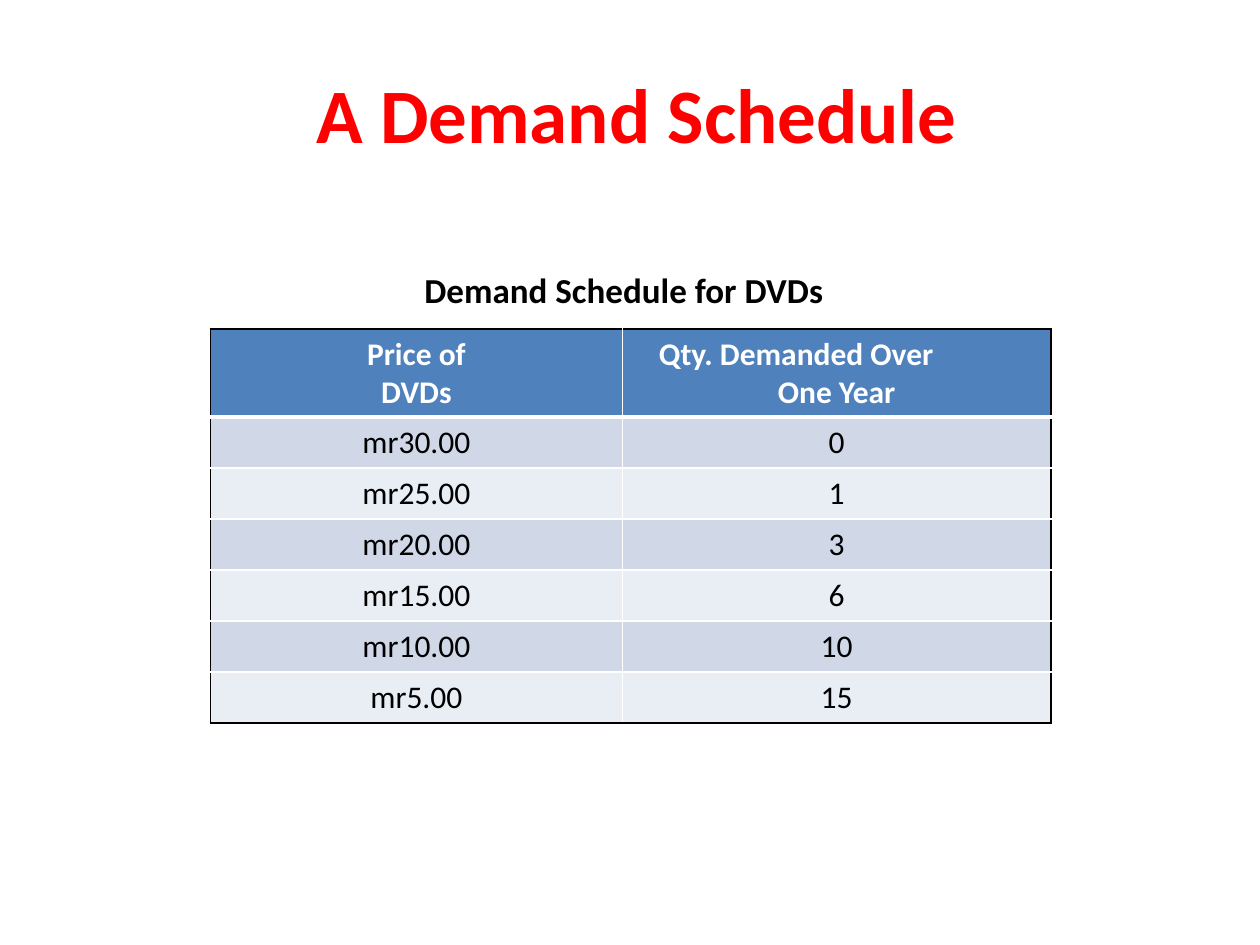
import pptx
import pptx.util
import pptx.dml.color
import pptx.enum.text
import pptx.oxml.ns
from lxml import etree

Inches = pptx.util.Inches
Pt = pptx.util.Pt
RGBColor = pptx.dml.color.RGBColor
CENTER = pptx.enum.text.PP_ALIGN.CENTER
LEFT = pptx.enum.text.PP_ALIGN.LEFT
qn = pptx.oxml.ns.qn

RED = RGBColor(0xFF, 0x00, 0x00)
BLACK = RGBColor(0x00, 0x00, 0x00)
WHITE = RGBColor(0xFF, 0xFF, 0xFF)
HEADER_BLUE = RGBColor(0x4F, 0x81, 0xBD)
BANDS = (RGBColor(0xD0, 0xD8, 0xE8), RGBColor(0xE9, 0xED, 0xF4))

HEADERS = ("Price of\nDVDs", "Qty. Demanded Over\nOne Year")
SCHEDULE = (
    ("mr30.00", "0"),
    ("mr25.00", "1"),
    ("mr20.00", "3"),
    ("mr15.00", "6"),
    ("mr10.00", "10"),
    ("mr5.00", "15"),
)


def write(tf, text, size=18, color=BLACK, bold=False, align=CENTER, font="Calibri"):
    """Fill a text frame, one paragraph per line of text."""
    tf.text = text
    for p in tf.paragraphs:
        p.alignment = align
        for r in p.runs:
            r.font.name = font
            r.font.size = Pt(size)
            r.font.bold = bold
            r.font.color.rgb = color


def set_borders(cell, **sides):
    """Draw cell borders; each of L, R, T, B is a (color, points) pair."""
    tcPr = cell._tc.get_or_add_tcPr()
    for i, side in enumerate("LRTB"):
        color, width = sides[side]
        ln = etree.Element(qn("a:ln" + side), w=str(Pt(width)))
        fill = etree.SubElement(ln, qn("a:solidFill"))
        etree.SubElement(fill, qn("a:srgbClr"), val=str(color))
        tcPr.insert(i, ln)


class SlideBuilder:
    def __init__(self, s):
        self.s = s

    def text(self, text, left, top, width, height, wrap=True, **style):
        sp = self.s.shapes.add_textbox(
            Inches(left), Inches(top), Inches(width), Inches(height))
        sp.text_frame.word_wrap = wrap
        write(sp.text_frame, text, **style)

    def table(self, rows, left, top, col_widths, header_height, row_height):
        last_row, last_col = len(rows) - 1, len(col_widths) - 1
        height = header_height + last_row * row_height
        table = self.s.shapes.add_table(
            len(rows), len(col_widths), Inches(left), Inches(top),
            Inches(sum(col_widths)), Inches(height)).table
        for col, width in zip(table.columns, col_widths):
            col.width = Inches(width)
        outer, inner, rule = (BLACK, 1), (WHITE, 1), (WHITE, 3)
        for i, row in enumerate(rows):
            header = i == 0
            table.rows[i].height = Inches(header_height if header else row_height)
            for j, text in enumerate(row):
                cell = table.cell(i, j)
                write(cell.text_frame, text, bold=header,
                      color=WHITE if header else BLACK)
                cell.fill.solid()
                cell.fill.fore_color.rgb = HEADER_BLUE if header else BANDS[(i - 1) % 2]
                set_borders(
                    cell,
                    L=outer if j == 0 else inner,
                    R=outer if j == last_col else inner,
                    T=outer if header else rule if i == 1 else inner,
                    B=outer if i == last_row else rule if header else inner)
        return table


def main():
    prs = pptx.Presentation()
    prs.slide_width, prs.slide_height = Inches(10), Inches(7.5)
    slide = SlideBuilder(prs.slides.add_slide(prs.slide_layouts[6]))

    slide.text("A Demand Schedule", 0.61, 0.48, 8.89, 0.84,
               size=44, color=RED, bold=True)
    table = slide.table((HEADERS,) + SCHEDULE, 1.67, 2.61, (3.27, 3.4), 0.7, 0.405)
    # The first line of the quantity heading hangs left of the second.
    p = table.cell(0, 1).text_frame.paragraphs[0]
    p.alignment = LEFT
    p._p.get_or_add_pPr().set("marL", str(Inches(0.19)))
    slide.text("Demand Schedule for DVDs", 3.27, 2.08, 3.4, 0.44,
               wrap=False, size=20, bold=True, align=LEFT)

    prs.save("out.pptx")


if __name__ == "__main__":
    main()
